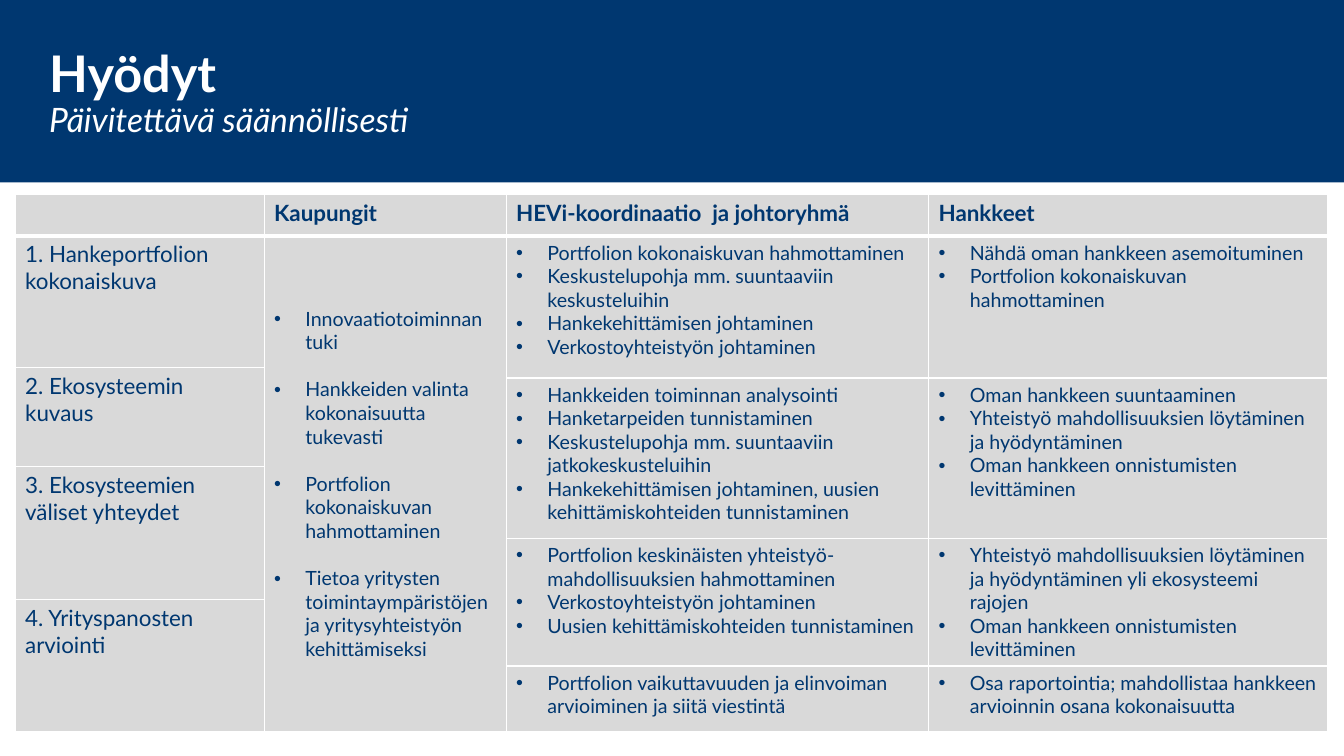
import pptx
import pptx.util
import pptx.dml.color
import pptx.enum.shapes
import pptx.enum.text
import pptx.oxml.ns
import lxml.etree

Inches = pptx.util.Inches
Pt = pptx.util.Pt
MIDDLE = pptx.enum.text.MSO_ANCHOR.MIDDLE


def rgb(value):
    return pptx.dml.color.RGBColor.from_string(value)


def add_xml(parent, tag, **attributes):
    return lxml.etree.SubElement(parent, pptx.oxml.ns.qn(tag), attributes)


class BenefitsSlide:
    FONT, NAVY, WHITE, GREY = "Lato", "003770", "FFFFFF", "D9D9D9"
    INDENT = Inches(0.31)

    def __init__(self, slide):
        self.slide = slide

    def style(self, font, size, color, bold=False, italic=False):
        font.name, font.size = self.FONT, Pt(size)
        font.bold, font.italic = bold, italic
        font.color.rgb = rgb(color)

    def banner(self, left, top, width, height):
        band = self.slide.shapes.add_shape(
            pptx.enum.shapes.MSO_SHAPE.RECTANGLE,
            Inches(left), Inches(top), Inches(width), Inches(height))
        band.shadow.inherit = False
        band.fill.solid()
        band.fill.fore_color.rgb = rgb(self.NAVY)
        band.line.fill.background()

    def title(self, heading, subtitle, left, top, width, height):
        frame = self.slide.shapes.add_textbox(
            Inches(left), Inches(top), Inches(width), Inches(height)).text_frame
        frame.word_wrap = True
        frame.vertical_anchor = MIDDLE
        line = frame.paragraphs[0]
        line.text = f"{heading}\v{subtitle}"
        line.line_spacing = 0.9
        heading_run, subtitle_run = line.runs
        self.style(heading_run.font, 36, self.WHITE, bold=True)
        self.style(subtitle_run.font, 24, self.WHITE, italic=True)

    def table(self, left, top, widths, heights):
        grid = self.slide.shapes.add_table(
            len(heights), len(widths), Inches(left), Inches(top),
            Inches(sum(widths)), Inches(sum(heights))).table
        for column, width in zip(grid.columns, widths):
            column.width = Inches(width)
        for row, height in zip(grid.rows, heights):
            row.height = Inches(height)
        for r in range(len(heights)):
            for c in range(len(widths)):
                self.cell_frame(grid.cell(r, c), r)
        return grid

    def cell_frame(self, cell, row):
        # The rule under the header row is thicker than the others
        weights = {"L": 1, "R": 1, "T": 3 if row == 1 else 1, "B": 3 if row == 0 else 1}
        properties = cell._tc.get_or_add_tcPr()
        for side, weight in weights.items():
            border = add_xml(properties, f"a:ln{side}", w=str(Pt(weight)))
            add_xml(add_xml(border, "a:solidFill"), "a:srgbClr", val=self.WHITE)
        cell.fill.solid()
        cell.fill.fore_color.rgb = rgb(self.GREY)

    def label(self, cell, text, bold=False):
        cell.text_frame.text = text
        self.style(cell.text_frame.paragraphs[0].font, 16, self.NAVY, bold)
        for run in cell.text_frame.paragraphs[0].runs:
            self.style(run.font, 16, self.NAVY, bold)

    def bullets(self, cell, items, gap=0):
        cell.text_frame.text = "\n".join(items)
        for number, item in enumerate(cell.text_frame.paragraphs):
            properties = item._p.get_or_add_pPr()
            properties.set("marL", str(self.INDENT))
            properties.set("indent", str(-self.INDENT))
            if number and gap:
                item.space_before = Pt(gap)
            add_xml(properties, "a:buFont", typeface="Arial")
            add_xml(properties, "a:buChar", char="•")
            for run in item.runs:
                self.style(run.font, 14, self.NAVY)


HEADERS = ["", "Kaupungit", "HEVi-koordinaatio  ja johtoryhmä", "Hankkeet"]

# (first row, row count, text)
THEMES = [
    (1, 1, "1. Hankeportfolion kokonaiskuva"),
    (2, 2, "2. Ekosysteemin kuvaus"),
    (4, 2, "3. Ekosysteemien väliset yhteydet"),
    (6, 2, "4. Yrityspanosten arviointi"),
]

CITIES = [
    "Innovaatiotoiminnan tuki",
    "Hankkeiden valinta kokonaisuutta tukevasti",
    "Portfolion kokonaiskuvan hahmottaminen",
    "Tietoa yritysten toimintaympäristöjen ja yritysyhteistyön kehittämiseksi",
]

# (first row, row count, coordination benefits, project benefits)
BENEFITS = [
    (1, 2,
     ["Portfolion kokonaiskuvan hahmottaminen",
      "Keskustelupohja mm. suuntaaviin keskusteluihin",
      "Hankekehittämisen johtaminen",
      "Verkostoyhteistyön johtaminen"],
     ["Nähdä oman hankkeen asemoituminen",
      "Portfolion kokonaiskuvan hahmottaminen"]),
    (3, 2,
     ["Hankkeiden toiminnan analysointi",
      "Hanketarpeiden tunnistaminen",
      "Keskustelupohja mm. suuntaaviin jatkokeskusteluihin",
      "Hankekehittämisen johtaminen, uusien kehittämiskohteiden tunnistaminen"],
     ["Oman hankkeen suuntaaminen",
      "Yhteistyö mahdollisuuksien löytäminen ja hyödyntäminen",
      "Oman hankkeen onnistumisten levittäminen"]),
    (5, 2,
     ["Portfolion keskinäisten yhteistyö-mahdollisuuksien hahmottaminen",
      "Verkostoyhteistyön johtaminen",
      "Uusien kehittämiskohteiden tunnistaminen"],
     ["Yhteistyö mahdollisuuksien löytäminen ja hyödyntäminen yli ekosysteemi rajojen",
      "Oman hankkeen onnistumisten levittäminen"]),
    (7, 1,
     ["Portfolion vaikuttavuuden ja elinvoiman arvioiminen ja siitä viestintä"],
     ["Osa raportointia; mahdollistaa hankkeen arvioinnin osana kokonaisuutta"]),
]


def span(grid, row, count, column):
    cell = grid.cell(row, column)
    if count > 1:
        cell.merge(grid.cell(row + count - 1, column))
    return cell


def main():
    deck = pptx.Presentation()
    deck.slide_width, deck.slide_height = Inches(13.33), Inches(7.5)
    page = BenefitsSlide(deck.slides.add_slide(deck.slide_layouts[6]))

    # Title band
    page.banner(0, 0, 13.33, 1.81)
    page.title("Hyödyt", "Päivitettävä säännöllisesti", 0.39, 0.21, 10.64, 1.45)

    # Benefits table
    grid = page.table(0.15, 1.93, [2.47, 2.4, 4.19, 3.96],
                      [0.41, 1.31, 0.1, 0.88, 0.71, 0.61, 0.46, 0.65])
    for column, header in enumerate(HEADERS):
        page.label(grid.cell(0, column), header, bold=True)
    for row, count, theme in THEMES:
        page.label(span(grid, row, count, 0), theme)

    cities = span(grid, 1, 7, 1)
    cities.vertical_anchor = MIDDLE
    page.bullets(cities, CITIES, gap=17)

    for row, count, coordination, projects in BENEFITS:
        page.bullets(span(grid, row, count, 2), coordination)
        page.bullets(span(grid, row, count, 3), projects)

    deck.save("out.pptx")


if __name__ == "__main__":
    main()
